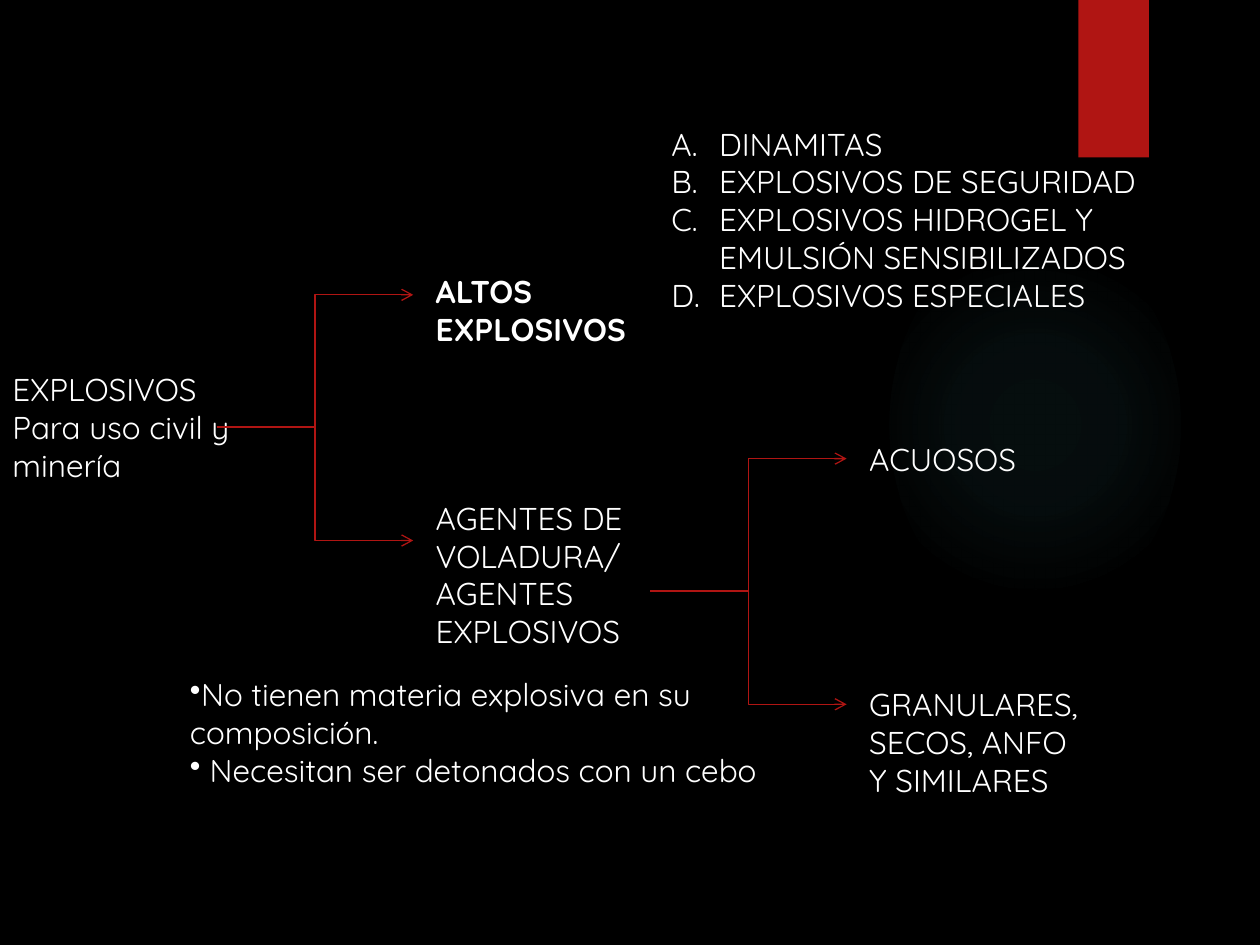
import pptx
import pptx.dml.color
import pptx.enum.shapes
import pptx.oxml
import pptx.oxml.ns
import pptx.util
from pptx.util import Inches

COLORS = {"background": "000000", "text": "FFFFFF", "red": "B01513", "glow": "50B9C1"}
FONT = "Quicksand"
NS = pptx.oxml.ns.nsdecls("a")


def rgb(name):
    return pptx.dml.color.RGBColor.from_string(COLORS[name])


def add_xml(parent, xml):
    parent.append(pptx.oxml.parse_xml(xml))


def add_text(slide, box, *paragraphs, size=18, bold=False, bullet=None, indent=0):
    """Place paragraphs in a box; bullet is the XML of a bullet element."""
    frame = slide.shapes.add_textbox(*map(Inches, box)).text_frame
    frame.word_wrap = True
    for index, line in enumerate(paragraphs):
        paragraph = frame.paragraphs[0] if index == 0 else frame.add_paragraph()
        paragraph.text = line
        if bullet:
            properties = paragraph._p.get_or_add_pPr()
            properties.set("marL", str(Inches(indent)))
            properties.set("indent", str(-Inches(indent)))
            add_xml(properties, bullet)
        paragraph.font.size = pptx.util.Pt(size)
        paragraph.font.name = FONT
        paragraph.font.bold = bold
        paragraph.font.color.rgb = rgb("text")


def add_decoration(slide, glow_box, ribbon_box):
    shape_type = pptx.enum.shapes.MSO_SHAPE
    # Faint round glow
    glow = slide.shapes.add_shape(shape_type.OVAL, *map(Inches, glow_box))
    glow.shadow.inherit = False
    glow.line.fill.background()
    stops = "".join(
        f'<a:gs pos="{position * 1000}"><a:srgbClr val="{COLORS["glow"]}">'
        f'<a:alpha val="{alpha * 1000}"/></a:srgbClr></a:gs>'
        for position, alpha in ((0, 7), (36, 6), (69, 0)))
    gradient = pptx.oxml.parse_xml(
        f'<a:gradFill {NS} rotWithShape="1"><a:gsLst>{stops}</a:gsLst><a:path path="circle">'
        '<a:fillToRect l="50000" t="50000" r="50000" b="50000"/></a:path></a:gradFill>')
    glow._element.spPr.find(pptx.oxml.ns.qn("a:prstGeom")).addnext(gradient)
    # Red ribbon at the top edge
    ribbon = slide.shapes.add_shape(shape_type.RECTANGLE, *map(Inches, ribbon_box))
    ribbon.shadow.inherit = False
    ribbon.fill.solid()
    ribbon.fill.fore_color.rgb = rgb("red")
    ribbon.line.fill.background()


def add_fork(slide, left, top, width=1.56, rise=1.05, drop=0.9):
    """Two elbow arrows that part from one point to an upper and a lower branch."""
    for offset in (-rise, drop):
        arrow = slide.shapes.add_connector(
            pptx.enum.shapes.MSO_CONNECTOR.ELBOW,
            *map(Inches, (left, top, left + width, top + offset)))
        arrow.line.color.rgb = rgb("red")
        arrow.line.width = pptx.util.Pt(0.75)
        add_xml(arrow.line._get_or_add_ln(), f'<a:tailEnd {NS} type="arrow"/>')
        add_xml(arrow._element.spPr, f"<a:effectLst {NS}/>")


def add_main_branches(slide, left, top):
    add_text(slide, (left, top, 1.95, 1.01), "EXPLOSIVOS", "Para uso civil y minería")
    add_fork(slide, left + 1.72, top + 0.5)
    add_text(slide, (left + 3.36, top - 0.78, 2.42, 0.71), "ALTOS EXPLOSIVOS", bold=True)
    add_text(slide, (left + 3.36, top + 1.02, 2.42, 1.31),
             "AGENTES DE VOLADURA/ AGENTES EXPLOSIVOS")


def add_agent_branches(slide, left, top):
    add_fork(slide, left, top)
    add_text(slide, (left + 1.64, top - 1.25, 1.95, 0.4), "ACUOSOS")
    add_text(slide, (left + 1.64, top + 0.7, 1.95, 1.01), "GRANULARES, SECOS, ANFO Y SIMILARES")


def add_lists(slide, high_box, agent_box):
    add_text(slide, high_box, "DINAMITAS", "EXPLOSIVOS DE SEGURIDAD",
             "EXPLOSIVOS HIDROGEL Y EMULSIÓN SENSIBILIZADOS", "EXPLOSIVOS ESPECIALES",
             bullet=f'<a:buAutoNum {NS} type="alphaUcPeriod"/>', indent=0.38)
    add_text(slide, agent_box, "No tienen materia explosiva en su composición.",
             " Necesitan ser detonados con un cebo", bullet=f'<a:buChar {NS} char="•"/>')


def main():
    deck = pptx.Presentation()
    deck.slide_width, deck.slide_height = Inches(10), Inches(7.5)
    slide = deck.slides.add_slide(deck.slide_layouts[6])
    slide.background.fill.solid()
    slide.background.fill.fore_color.rgb = rgb("background")
    add_decoration(slide, (7.06, 1.83, 2.31, 3.08), (8.56, 0, 0.56, 1.25))
    add_main_branches(slide, 0, 2.89)
    add_agent_branches(slide, 5.16, 4.69)
    add_lists(slide, (5.23, 0.94, 3.91, 2.22), (1.41, 5.31, 5, 1.31))
    deck.save("out.pptx")


if __name__ == "__main__":
    main()
